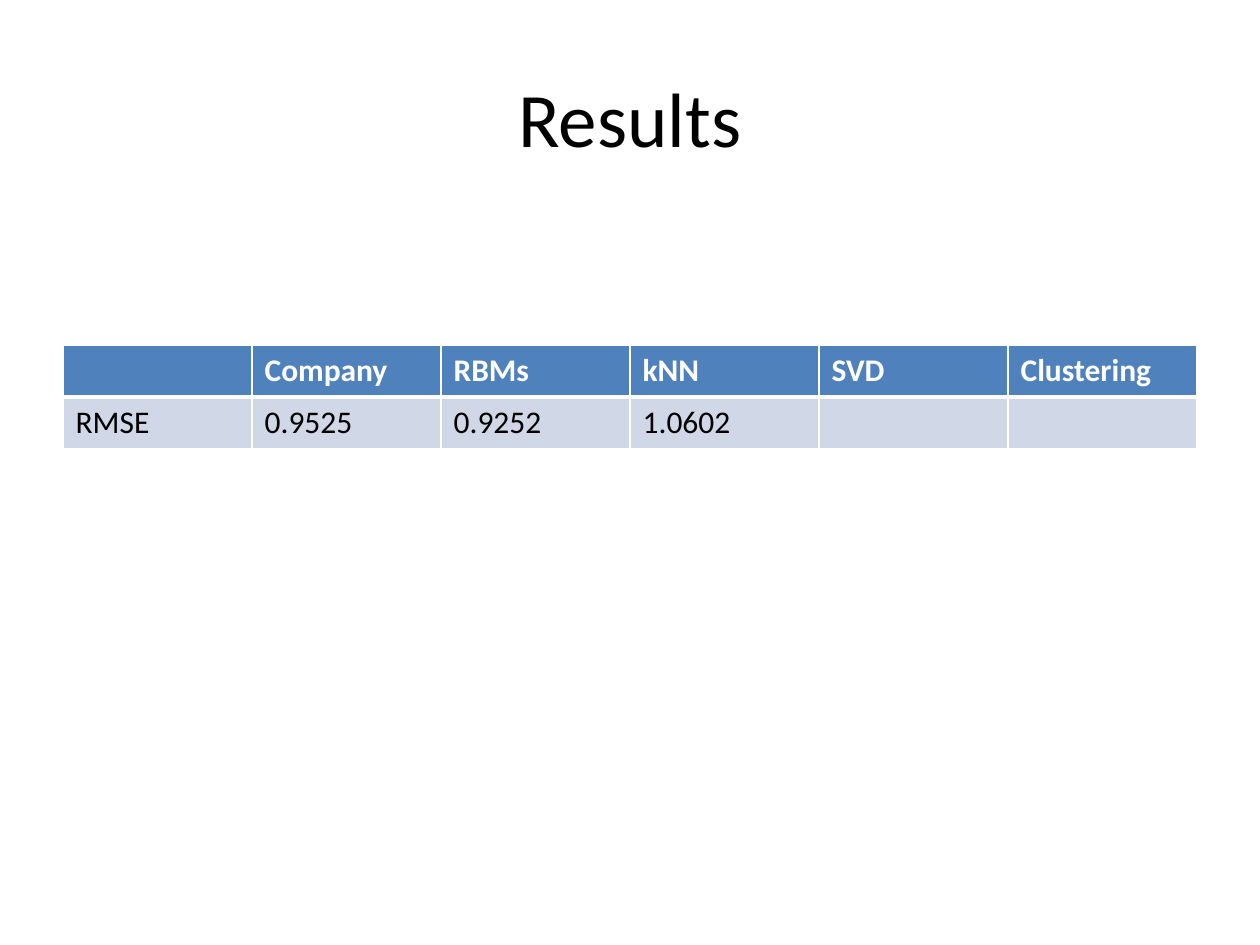
"""Build the Results slide: a title above a table of RMSE by method."""
from lxml import etree
from pptx import Presentation
from pptx.dml.color import RGBColor
from pptx.enum.text import MSO_ANCHOR, PP_ALIGN
from pptx.oxml.ns import qn
from pptx.util import Inches, Pt

CENTER, MIDDLE = PP_ALIGN.CENTER, MSO_ANCHOR.MIDDLE

TITLE = "Results"
RESULTS = [
    ["", "Company", "RBMs", "kNN", "SVD", "Clustering"],
    ["RMSE", "0.9525", "0.9252", "1.0602", "", ""],
]
COLORS = {"text": "000000", "header": "4F81BD", "body": "D0D8E8", "white": "FFFFFF"}
FONT = "Calibri"
MARGIN, WIDTH = 0.5, 9
TABLE_TOP, ROW_HEIGHT = 2.74, 0.41


def color(name):
    return RGBColor.from_string(COLORS[name])


def style_text(paragraph, size, color_name, bold=False):
    font = paragraph.font
    font.name, font.size, font.bold = FONT, Pt(size), bold
    font.color.rgb = color(color_name)


def add_borders(cell, widths):
    properties = cell._tc.get_or_add_tcPr()
    for side, width in widths.items():
        line = etree.SubElement(properties, qn(f"a:ln{side}"), w=str(Pt(width)))
        fill = etree.SubElement(line, qn("a:solidFill"))
        etree.SubElement(fill, qn("a:srgbClr"), val=COLORS["white"])


def add_title(slide):
    title = slide.shapes.add_textbox(
        Inches(MARGIN), Inches(0.3), Inches(WIDTH), Inches(1.25)).text_frame
    title.word_wrap = True
    title.vertical_anchor = MIDDLE
    title.text = TITLE
    title.paragraphs[0].alignment = CENTER
    style_text(title.paragraphs[0], 44, "text")


def add_results(slide):
    table = slide.shapes.add_table(
        len(RESULTS), len(RESULTS[0]), Inches(MARGIN), Inches(TABLE_TOP),
        Inches(WIDTH), Inches(ROW_HEIGHT * len(RESULTS))).table
    for row, values in enumerate(RESULTS):
        header = row == 0
        for column, value in enumerate(values):
            cell = table.cell(row, column)
            cell.text = value
            style_text(cell.text_frame.paragraphs[0], 18,
                       "white" if header else "text", header)
            add_borders(cell, {"L": 1, "R": 1, "T": 1 if header else 3,
                               "B": 3 if header else 1})
            cell.fill.solid()
            cell.fill.fore_color.rgb = color("header" if header else "body")


def main():
    deck = Presentation()
    deck.slide_width, deck.slide_height = Inches(10), Inches(7.5)
    slide = deck.slides.add_slide(deck.slide_layouts[6])
    add_title(slide)
    add_results(slide)
    deck.save("out.pptx")


if __name__ == "__main__":
    main()
